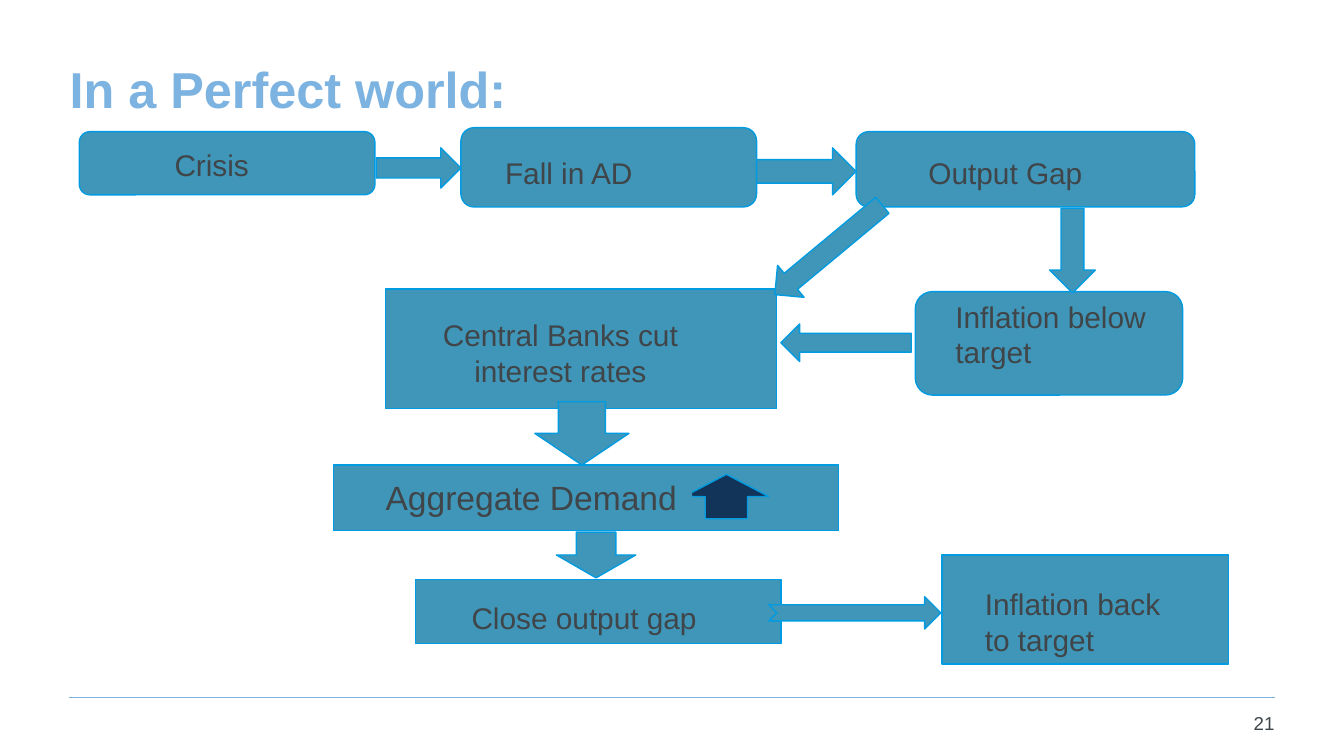
from lxml import etree
from pptx import Presentation, util as u
from pptx.dml.color import RGBColor
from pptx.enum import shapes, text
from pptx.oxml.ns import qn

prs = Presentation()
prs.slide_width = u.Inches(10)
prs.slide_height = prs.slide_width * 9 // 16
s = prs.slides.add_slide(prs.slide_layouts[6])

# Grid of 100 columns; rows are as tall as columns are wide
COL = prs.slide_width // 100
S, A = shapes.MSO_SHAPE, text.PP_ALIGN
BLUE, EDGE, NAVY, SKY, GREY = "4096B8", "009BE1", "113458", "7CB3E1", "3F4548"


def rgb(code):
    return RGBColor.from_string(code)


def add_label(words, x, y, w, h, size=16, align=A.LEFT, color=GREY):
    sp = s.shapes.add_textbox(*[round(v * COL) for v in (x, y, w, h)])
    tf = sp.text_frame
    tf.word_wrap = True
    tf.text = words
    p = tf.paragraphs[0]
    p.alignment = align
    f = p.runs[0].font
    f.name, f.size, f.color.rgb = "Arial", u.Pt(size), rgb(color)
    return sp


# Title
title = add_label("In a Perfect world:", 4.2, 3.3, 90.6, 6.5, 27, color=SKY)
title.text_frame.vertical_anchor = text.MSO_ANCHOR.MIDDLE
title.text_frame.paragraphs[0].runs[0].font.bold = True

# Boxes, then the arrows over them: kind, left, top, width, height, rotation, fill
parts = [
    (S.ROUNDED_RECTANGLE, 5.9, 9.8, 22, 4.7, 0, BLUE),     # crisis
    (S.ROUNDED_RECTANGLE, 34.3, 9.5, 22, 5.9, 0, BLUE),    # fall in AD
    (S.ROUNDED_RECTANGLE, 63.7, 9.8, 25.2, 5.6, 0, BLUE),  # output gap
    (S.ROUNDED_RECTANGLE, 68.1, 21.7, 19.9, 7.7, 0, BLUE),  # inflation below
    (S.RECTANGLE, 28.7, 21.5, 29.1, 8.9, 0, BLUE),         # central banks
    (S.RECTANGLE, 24.8, 34.6, 37.6, 4.9, 0, BLUE),         # aggregate demand
    (S.RECTANGLE, 30.9, 43.1, 27.2, 4.8, 0, BLUE),         # close output gap
    (S.RECTANGLE, 70.1, 41.3, 21.3, 8.1, 0, BLUE),         # inflation back
    (S.RIGHT_ARROW, 28, 11, 6.3, 3, 0, BLUE),
    (S.RIGHT_ARROW, 56.3, 11, 7.4, 3.5, 0, BLUE),
    (S.DOWN_ARROW, 78.1, 15.5, 3.4, 6.3, 0, BLUE),
    (S.DOWN_ARROW, 60.1, 13.4, 3.1, 10.4, 50.3, BLUE),
    (S.RIGHT_ARROW, 58.1, 24.1, 9.7, 2.8, 180, BLUE),
    (S.DOWN_ARROW, 39.8, 29.9, 7, 4.7, 0, BLUE),
    (S.DOWN_ARROW, 41.4, 39.6, 5.9, 3.4, 0, BLUE),
    (S.NOTCHED_RIGHT_ARROW, 57.2, 44.4, 12.8, 2.4, 0, BLUE),
    (S.UP_ARROW, 50.9, 35.3, 6.3, 3.3, 0, NAVY),           # demand rises
]
for kind, x, y, w, h, turn, fill in parts:
    sp = s.shapes.add_shape(kind, *[round(v * COL) for v in (x, y, w, h)])
    sp.rotation = turn
    sp.shadow.inherit = False
    sp.fill.solid()
    sp.fill.fore_color.rgb = rgb(fill)
    sp.line.color.rgb = rgb(EDGE)
    sp.line.width = u.Pt(0.75)

# Box labels
for label in [
    ("Crisis", 12, 10.4, 9.8, 3.7),
    ("Fall in AD", 36.6, 11, 17.3, 3.7),
    ("Output Gap", 68.1, 11, 20.5, 3.7),
    ("Inflation below target", 70.1, 21.7, 16.5, 6.4),
    ("Central Banks cut interest rates", 29.5, 23.1, 24.4, 6.4, 16, A.CENTER),
    ("Close output gap", 34.1, 44.1, 22.2, 3.7),
    ("Inflation back to target", 72.3, 43.1, 17.3, 6.4),
]:
    add_label(*label)

# The demand label covers the left tip of the navy arrow
demand = add_label("Aggregate Demand", 27.7, 35, 23.8, 4, 18)
demand.fill.solid()
demand.fill.fore_color.rgb = rgb(BLUE)

# Footer rule and slide number
rule = s.shapes.add_connector(shapes.MSO_CONNECTOR.STRAIGHT, *[
    round(v * COL) for v in (5.1, 51.9, 94.9, 51.9)])
rule.line.color.rgb = rgb(SKY)
rule.line.width = u.Pt(1)
etree.SubElement(rule._element.spPr, qn("a:effectLst"))
add_label("21", 88.7, 52.5, 7.1, 2.8, 10, A.RIGHT)

prs.save("out.pptx")
